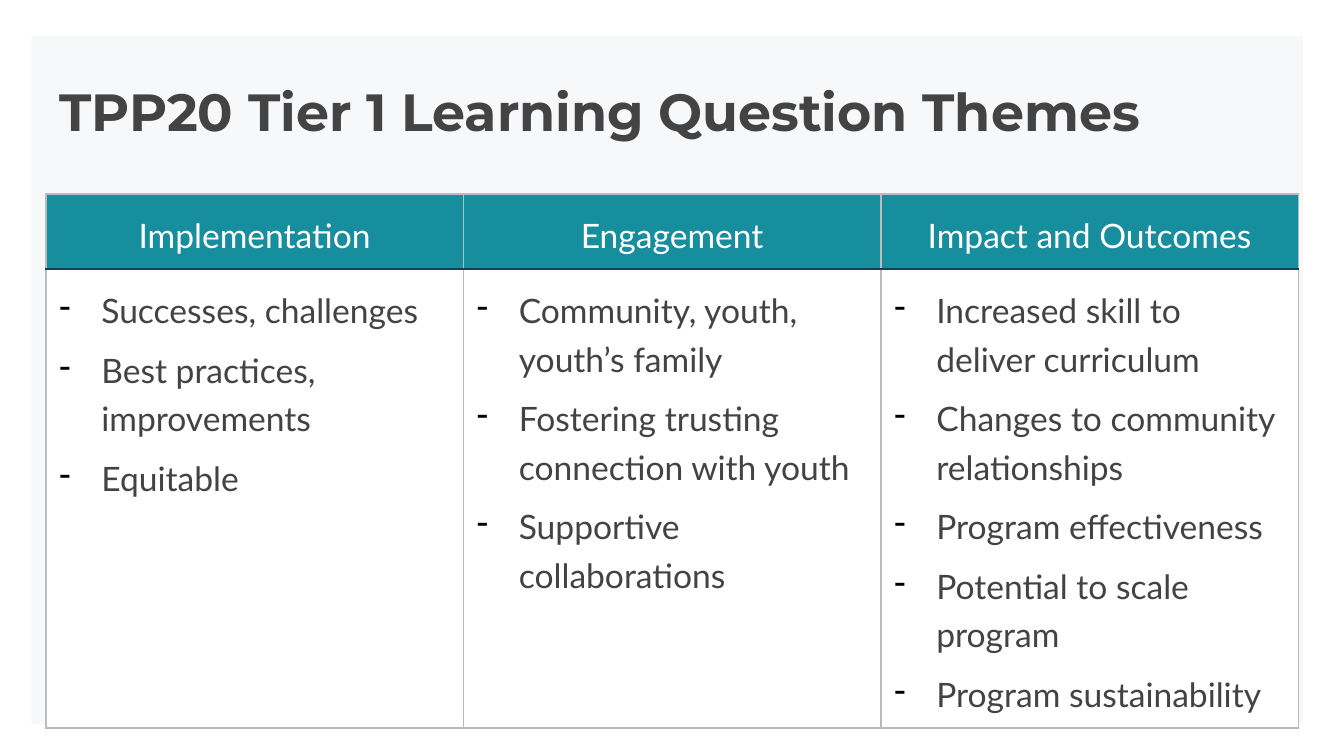
from lxml import etree
from pptx import Presentation
from pptx.dml.color import RGBColor
from pptx.enum.shapes import MSO_SHAPE
from pptx.enum.text import MSO_ANCHOR, PP_ALIGN
from pptx.oxml.ns import qn
from pptx.util import Pt

RECTANGLE = MSO_SHAPE.RECTANGLE
TOP = MSO_ANCHOR.TOP
CENTER, LEFT = PP_ALIGN.CENTER, PP_ALIGN.LEFT

NAVY = RGBColor(0x07, 0x37, 0x63)
TEAL = RGBColor(0x16, 0x8E, 0x9E)
DARK_TEAL = RGBColor(0x0A, 0x47, 0x4F)
GRAY = RGBColor(0xBB, 0xBB, 0xBD)
CHARCOAL = RGBColor(0x43, 0x43, 0x43)
WHITE = RGBColor(0xFF, 0xFF, 0xFF)
BLACK = RGBColor(0, 0, 0)

TITLE = "TPP20 Tier 1 Learning Question Themes"
THEMES = [
    ("Implementation", [
        "Successes, challenges",
        "Best practices, improvements",
        "Equitable",
    ]),
    ("Engagement", [
        "Community, youth, youth’s family",
        "Fostering trusting connection with youth",
        "Supportive collaborations",
    ]),
    ("Impact and Outcomes", [
        "Increased skill to deliver curriculum",
        "Changes to community relationships",
        "Program effectiveness",
        "Potential to scale program",
        "Program sustainability",
    ]),
]

SLIDE_WIDTH, SLIDE_HEIGHT = 720, 405
PANEL = (16.9, 19.4, 681.1, 368.6)
TITLE_BOX = (24.6, 35.3, 671, 45.4)
TABLE_LEFT, TABLE_TOP, TABLE_WIDTH = 24.6, 103.9, 671
ROW_HEIGHTS = (40.3, 245.7)
INSET = 7.2
INDENT = 22.5
PARAGRAPH_GAP = 6

TITLE_FONT = {"name": "Montserrat", "size": Pt(28), "bold": True}
TABLE_FONT = {"name": "Lato", "size": Pt(18), "bold": False}
THIN, RULE = (GRAY, 1), (DARK_TEAL, 1.5)
HEADER_BORDERS = {"L": THIN, "R": THIN, "T": THIN, "B": RULE}
BODY_BORDERS = {"L": THIN, "R": THIN, "T": RULE, "B": THIN}


def points(values):
    return [Pt(value) for value in values]


def add_text(paragraph, text, font, color):
    run = paragraph.add_run()
    run.text = text
    for name, value in font.items():
        setattr(run.font, name, value)
    run.font.color.rgb = color


def set_margins(holder):
    for side in ("left", "top", "right", "bottom"):
        setattr(holder, f"margin_{side}", Pt(INSET))


def add_color(parent, tag, color):
    holder = etree.SubElement(parent, qn(tag))
    return etree.SubElement(holder, qn("a:srgbClr"), val=str(color))


def add_bullet(paragraph):
    properties = paragraph._p.get_or_add_pPr()
    properties.set("marL", str(Pt(INDENT)))
    properties.set("indent", str(-Pt(INDENT)))
    add_color(properties, "a:buClr", BLACK)
    etree.SubElement(properties, qn("a:buChar"), char="-")


def fill_cell(cell, lines, fill, color, borders, alignment, bulleted):
    set_margins(cell)
    cell.vertical_anchor = TOP
    properties = cell._tc.get_or_add_tcPr()
    for side, (border_color, width) in borders.items():
        line = etree.SubElement(properties, qn(f"a:ln{side}"), w=str(Pt(width)))
        add_color(line, "a:solidFill", border_color)
    cell.fill.solid()
    cell.fill.fore_color.rgb = fill

    frame = cell.text_frame
    for index, text in enumerate(lines):
        paragraph = frame.add_paragraph() if index else frame.paragraphs[0]
        if bulleted:
            add_bullet(paragraph)
        paragraph.alignment = alignment
        paragraph.line_spacing = 1.2
        paragraph.space_before = Pt(PARAGRAPH_GAP if index else 0)
        add_text(paragraph, text, TABLE_FONT, color)


def add_panel(slide):
    panel = slide.shapes.add_shape(RECTANGLE, *points(PANEL))
    panel.shadow.inherit = False
    panel.line.fill.background()
    panel.fill.solid()
    panel.fill.fore_color.rgb = NAVY
    color = panel._element.spPr.find(f".//{qn('a:srgbClr')}")
    etree.SubElement(color, qn("a:alpha"), val="3000")


def add_title(slide):
    frame = slide.shapes.add_textbox(*points(TITLE_BOX)).text_frame
    frame.word_wrap = True
    frame.vertical_anchor = TOP
    set_margins(frame)
    add_text(frame.paragraphs[0], TITLE, TITLE_FONT, CHARCOAL)


def add_themes(slide):
    box = points((TABLE_LEFT, TABLE_TOP, TABLE_WIDTH, sum(ROW_HEIGHTS)))
    table = slide.shapes.add_table(2, len(THEMES), *box).table
    table.first_row = False
    table.horz_banding = False
    for row, height in zip(table.rows, ROW_HEIGHTS):
        row.height = Pt(height)
    for index, (heading, items) in enumerate(THEMES):
        table.columns[index].width = Pt(TABLE_WIDTH / len(THEMES))
        fill_cell(table.cell(0, index), [heading], TEAL, WHITE,
                  HEADER_BORDERS, CENTER, bulleted=False)
        fill_cell(table.cell(1, index), items, WHITE, CHARCOAL,
                  BODY_BORDERS, LEFT, bulleted=True)


def main():
    presentation = Presentation()
    presentation.slide_width = Pt(SLIDE_WIDTH)
    presentation.slide_height = Pt(SLIDE_HEIGHT)
    slide = presentation.slides.add_slide(presentation.slide_layouts[6])
    add_panel(slide)
    add_title(slide)
    add_themes(slide)
    presentation.save("out.pptx")


if __name__ == "__main__":
    main()
